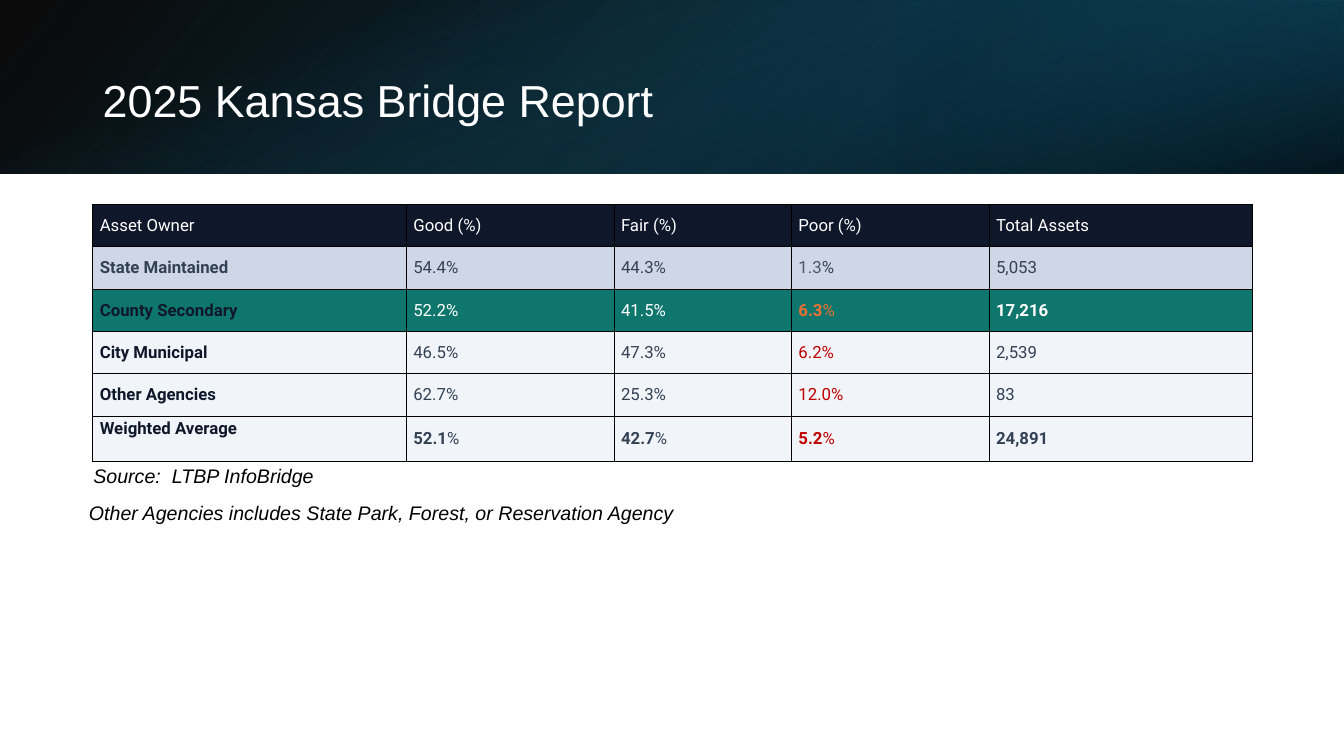
"""Build the 2025 Kansas Bridge Report slide."""
from dataclasses import dataclass

from pptx import Presentation
from pptx.dml.color import RGBColor
from pptx.enum.shapes import MSO_SHAPE
from pptx.enum.text import MSO_ANCHOR, PP_ALIGN
from pptx.oxml import parse_xml
from pptx.oxml.ns import nsdecls
from pptx.slide import Slide
from pptx.table import _Cell
from pptx.text.text import _Paragraph
from pptx.util import Inches, Pt

BLACK = RGBColor(0x00, 0x00, 0x00)
WHITE = RGBColor(0xFF, 0xFF, 0xFF)
NAVY = RGBColor(0x0F, 0x17, 0x2A)
SLATE = RGBColor(0x33, 0x41, 0x55)
GRAY = RGBColor(0x4B, 0x55, 0x63)
RED = RGBColor(0xC0, 0x00, 0x00)
ORANGE = RGBColor(0xE9, 0x71, 0x32)
GREEN = RGBColor(0x0F, 0x76, 0x6E)
ICE = RGBColor(0xCF, 0xD7, 0xE7)
MIST = RGBColor(0xF1, 0xF5, 0xF9)
BLUE = RGBColor(0x15, 0x60, 0x82)
DEEP_BLUE = RGBColor(0x0F, 0x48, 0x61)
DARK_BLUE = RGBColor(0x0A, 0x30, 0x41)


@dataclass
class Stop:
    position: int
    color: RGBColor
    opacity: int = 100


@dataclass
class Band:
    left: float
    top: float
    width: float
    height: float
    angle: int
    stops: list[Stop]
    rotation: int = 0
    flipped: bool = False


@dataclass
class TextRun:
    text: str
    color: RGBColor
    bold: bool = False


@dataclass
class TableRow:
    fill: RGBColor
    cells: list[list[TextRun]]


@dataclass
class Label:
    text: str
    left: float
    top: float
    width: float
    height: float
    size: int
    color: RGBColor
    inset: float
    italic: bool = False
    align: PP_ALIGN = PP_ALIGN.LEFT
    anchor: MSO_ANCHOR = MSO_ANCHOR.TOP
    spacing: float = 1.0


BANDS = [
    Band(0, 0, 13.33, 1.72, 140, [Stop(0, BLACK, 96), Stop(100, DEEP_BLUE)], flipped=True),
    Band(8.89, 0, 4.44, 1.72, 320,
         [Stop(0, DARK_BLUE, 68), Stop(19, DARK_BLUE, 68), Stop(100, BLUE, 79)], 180, True),
    Band(5.8, -5.8, 1.72, 13.33, 340,
         [Stop(0, BLUE, 0), Stop(23, BLUE, 0), Stop(99, BLACK, 74), Stop(100, BLACK, 74)], 90),
]
LABELS = [
    Label("2025 Kansas Bridge Report", 0.92, 0.54, 10.98, 0.96, 32, WHITE, 0.1,
          anchor=MSO_ANCHOR.MIDDLE, spacing=0.9),
    Label("Source:  LTBP InfoBridge", -0.18, 4.5, 4.4, 0.44, 14, BLACK, 0.1,
          True, PP_ALIGN.CENTER),
    Label("Other Agencies includes State Park, Forest, or Reservation Agency",
          0.7, 4.87, 6.17, 0.44, 14, BLACK, 0.1, True, PP_ALIGN.CENTER),
]


def plain(color: RGBColor, *texts: str) -> list[list[TextRun]]:
    """Return one regular cell per text."""
    return [[TextRun(text, color)] for text in texts]


def strong(text: str, color: RGBColor) -> list[TextRun]:
    """Return a bold cell."""
    return [TextRun(text, color, True)]


def percent(number: str, color: RGBColor) -> list[TextRun]:
    """Return a bold number with a regular percent sign."""
    return [TextRun(number, color, True), TextRun("%", color)]


COLUMN_WIDTHS = [3.11, 2.06, 1.76, 1.96, 2.61]
ROW_HEIGHTS = [0.42] * 5 + [0.45]
ROWS = [
    TableRow(NAVY, plain(WHITE, "Asset Owner", "Good (%)", "Fair (%)", "Poor (%)",
                         "Total Assets")),
    TableRow(ICE, [strong("State Maintained", SLATE), *plain(SLATE, "54.4%", "44.3%"),
                   [TextRun("1.3", GRAY), TextRun("%", SLATE)], *plain(SLATE, "5,053")]),
    TableRow(GREEN, [strong("County Secondary", NAVY), *plain(WHITE, "52.2%", "41.5%"),
                     percent("6.3", ORANGE), strong("17,216", WHITE)]),
    TableRow(MIST, [strong("City Municipal", NAVY), *plain(SLATE, "46.5%", "47.3%"),
                    *plain(RED, "6.2%"), *plain(SLATE, "2,539")]),
    TableRow(MIST, [strong("Other Agencies", NAVY), *plain(SLATE, "62.7%", "25.3%"),
                    *plain(RED, "12.0%"), *plain(SLATE, "83")]),
    TableRow(MIST, [strong("Weighted Average", NAVY), percent("52.1", SLATE),
                    percent("42.7", SLATE), percent("5.2", RED), strong("24,891", SLATE)]),
]


def add_run(p: _Paragraph, run: TextRun, font: str, size: int, italic: bool = False) -> None:
    """Add one formatted run to a paragraph."""
    r = p.add_run()
    r.text = run.text
    r.font.name, r.font.size = font, Pt(size)
    r.font.bold, r.font.italic = run.bold, italic
    r.font.color.rgb = run.color


def add_band(s: Slide, band: Band) -> None:
    """Draw one gradient layer of the header."""
    sp = s.shapes.add_shape(MSO_SHAPE.RECTANGLE, Inches(band.left), Inches(band.top),
                            Inches(band.width), Inches(band.height))
    sp.shadow.inherit = False
    sp.line.fill.background()
    sp.rotation = band.rotation
    spPr = sp._element.spPr
    if band.flipped:
        spPr.xfrm.set("flipH", "1")
    stops = "".join(
        f'<a:gs pos="{stop.position * 1000}"><a:srgbClr val="{stop.color}">'
        f'<a:alpha val="{stop.opacity * 1000}"/></a:srgbClr></a:gs>' for stop in band.stops)
    spPr.prstGeom.addnext(parse_xml(
        f'<a:gradFill {nsdecls("a")} rotWithShape="1"><a:gsLst>{stops}</a:gsLst>'
        f'<a:lin ang="{band.angle * 60000}" scaled="0"/></a:gradFill>'))


def add_label(s: Slide, label: Label) -> None:
    """Draw one text box."""
    sp = s.shapes.add_textbox(Inches(label.left), Inches(label.top),
                              Inches(label.width), Inches(label.height))
    tf = sp.text_frame
    tf.word_wrap = True
    tf.vertical_anchor = label.anchor
    tf.margin_left = tf.margin_right = tf.margin_top = tf.margin_bottom = Inches(label.inset)
    p = tf.paragraphs[0]
    p.alignment, p.line_spacing = label.align, label.spacing
    add_run(p, TextRun(label.text, label.color), "Arial", label.size, label.italic)


def fill_cell(cell: _Cell, runs: list[TextRun], fill: RGBColor) -> None:
    """Write, border and fill one table cell."""
    cell.margin_left = cell.margin_right = Inches(0.07)
    cell.margin_top = cell.margin_bottom = Inches(0.03)
    cell.vertical_anchor = MSO_ANCHOR.MIDDLE
    for side in "LRTB":
        cell._tc.get_or_add_tcPr().append(parse_xml(
            f'<a:ln{side} {nsdecls("a")} w="{Pt(0.75)}"><a:solidFill>'
            f'<a:srgbClr val="{BLACK}"/></a:solidFill></a:ln{side}>'))
    cell.fill.solid()
    cell.fill.fore_color.rgb = fill
    for run in runs:
        add_run(cell.text_frame.paragraphs[0], run, "Roboto", 12)


def add_bridge_table(s: Slide) -> None:
    """Draw the table of bridge conditions."""
    table = s.shapes.add_table(len(ROWS), len(COLUMN_WIDTHS), Inches(0.92), Inches(2.03),
                               Inches(sum(COLUMN_WIDTHS)), Inches(sum(ROW_HEIGHTS))).table
    for column, width in zip(table.columns, COLUMN_WIDTHS):
        column.width = Inches(width)
    for table_row, height, row in zip(table.rows, ROW_HEIGHTS, ROWS):
        table_row.height = Inches(height)
        for cell, runs in zip(table_row.cells, row.cells):
            fill_cell(cell, runs, row.fill)
    table.cell(len(ROWS) - 1, 0).vertical_anchor = MSO_ANCHOR.TOP


def main() -> None:
    """Build and save the slide."""
    prs = Presentation()
    prs.slide_width, prs.slide_height = Inches(13.33), Inches(7.5)
    s = prs.slides.add_slide(prs.slide_layouts[6])
    for band in BANDS:
        add_band(s, band)
    add_bridge_table(s)
    for label in LABELS:
        add_label(s, label)
    prs.save("out.pptx")


if __name__ == "__main__":
    main()
